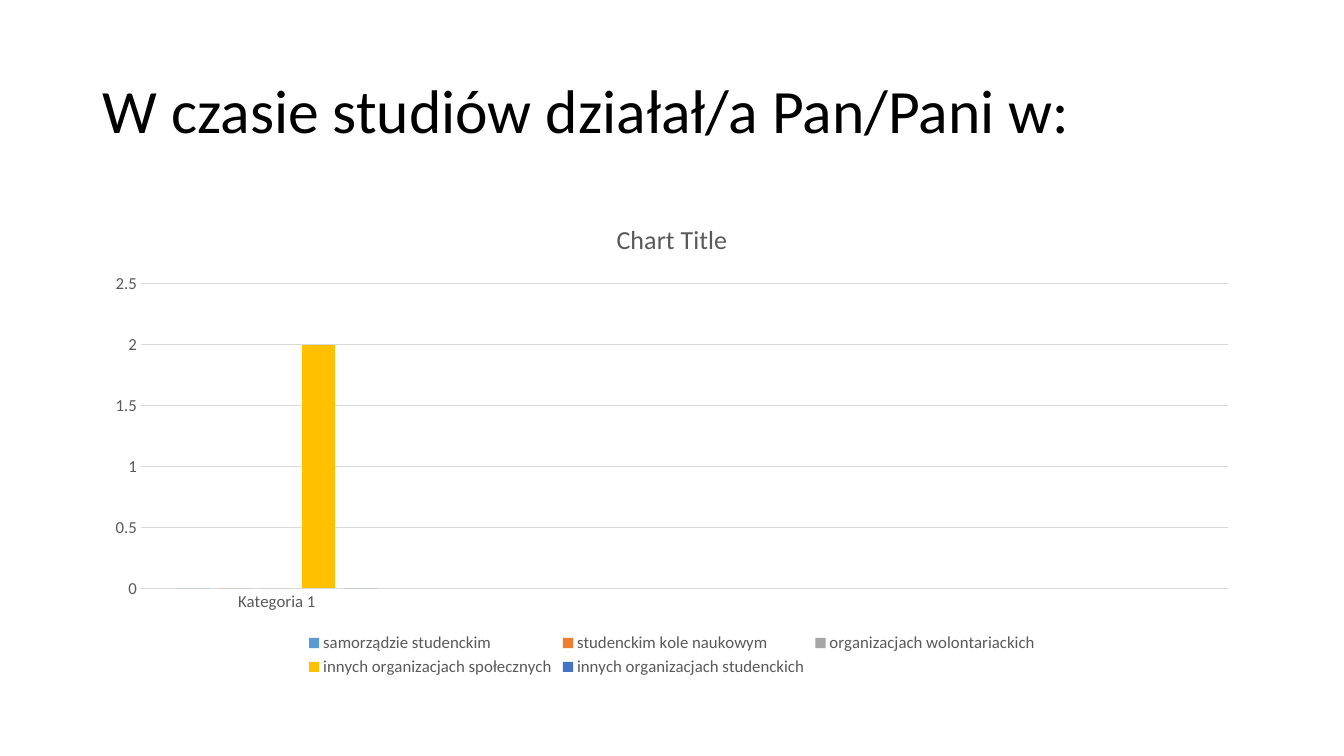
import pptx
import pptx.chart.data
import pptx.dml.color
import pptx.enum.chart
import pptx.enum.text
import pptx.util
from pptx.util import Cm


def style_font(font, size, color):
    font.name = "Calibri"
    font.size = pptx.util.Pt(size)
    font.bold = False
    font.color.rgb = pptx.dml.color.RGBColor.from_string(color)


def style_line(line, color):
    line.width = pptx.util.Pt(0.75)
    line.color.rgb = pptx.dml.color.RGBColor.from_string(color)


GREY_TEXT = "595959"
GREY_LINE = "D9D9D9"
LEFT, WIDTH = Cm(2.33), Cm(29.21)

activities = [
    ("samorządzie studenckim", 0, "5B9BD5"),
    ("studenckim kole naukowym", 0, "ED7D31"),
    ("organizacjach wolontariackich", 0, "A5A5A5"),
    ("innych organizacjach społecznych", 2, "FFC000"),
    ("innych organizacjach studenckich", 0, "4472C4"),
]

deck = pptx.Presentation()
deck.slide_width, deck.slide_height = Cm(33.87), Cm(19.05)
slide = deck.slides.add_slide(deck.slide_layouts[5])

question = slide.shapes.title
question.left, question.top = LEFT, Cm(1.01)
question.width, question.height = WIDTH, Cm(3.68)
question.text_frame.vertical_anchor = pptx.enum.text.MSO_ANCHOR.MIDDLE
question_line = question.text_frame.paragraphs[0]
question_line.alignment = pptx.enum.text.PP_ALIGN.LEFT
question_line.line_spacing = 0.9
question_run = question_line.add_run()
question_run.text = "W czasie studiów działał/a Pan/Pani w:"
style_font(question_run.font, 44, "000000")

answers = pptx.chart.data.CategoryChartData()
answers.categories = ["Kategoria 1", "", "", ""]
for activity, count, color in activities:
    answers.add_series(activity, [count, None, None, None])

activity_chart = slide.shapes.add_chart(
    pptx.enum.chart.XL_CHART_TYPE.COLUMN_CLUSTERED,
    LEFT, Cm(5.07), WIDTH, Cm(12.09), answers,
).chart
style_font(activity_chart.font, 10, "000000")

activity_chart.has_title = True
heading_run = activity_chart.chart_title.text_frame.paragraphs[0].add_run()
heading_run.text = "Chart Title"
style_font(heading_run.font, 18.6, GREY_TEXT)
activity_chart.chart_title.include_in_layout = False

activity_chart.has_legend = True
legend = activity_chart.legend
legend.position = pptx.enum.chart.XL_LEGEND_POSITION.BOTTOM
legend.include_in_layout = False
style_font(legend.font, 12, GREY_TEXT)

category_axis = activity_chart.category_axis
count_axis = activity_chart.value_axis
for axis in (category_axis, count_axis):
    axis.major_tick_mark = pptx.enum.chart.XL_TICK_MARK.NONE
    axis.minor_tick_mark = pptx.enum.chart.XL_TICK_MARK.NONE
    style_font(axis.tick_labels.font, 12, GREY_TEXT)
style_line(category_axis.format.line, GREY_LINE)
count_axis.format.line.fill.background()
count_axis.has_major_gridlines = True
style_line(count_axis.major_gridlines.format.line, GREY_LINE)

columns = activity_chart.plots[0]
columns.gap_width = 219
columns.overlap = -27
columns.vary_by_categories = False
for column, (activity, count, color) in zip(columns.series, activities):
    column.invert_if_negative = False
    column.format.fill.solid()
    column.format.fill.fore_color.rgb = pptx.dml.color.RGBColor.from_string(color)

deck.save("out.pptx")
